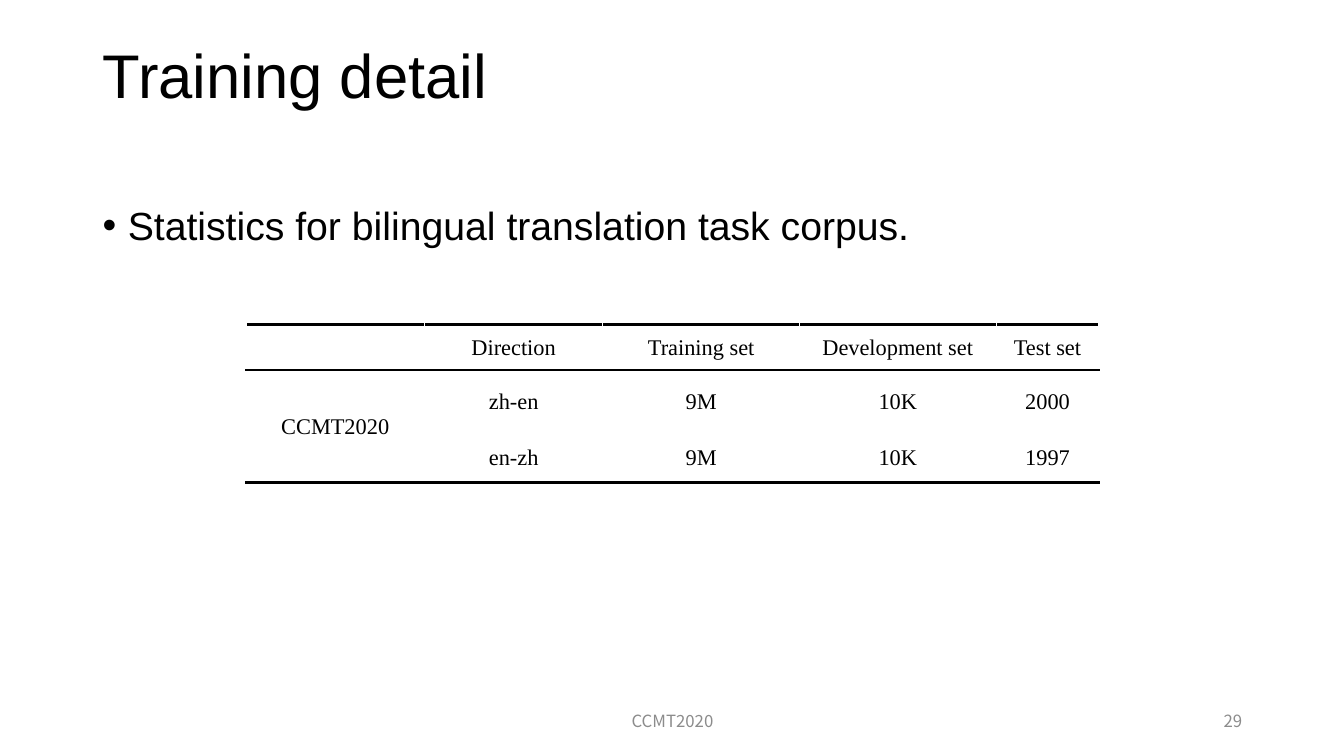
from lxml import etree
from pptx import Presentation
from pptx.dml.color import RGBColor
from pptx.enum.text import MSO_ANCHOR, PP_ALIGN
from pptx.oxml.ns import qn
from pptx.util import Inches, Pt

LEFT, CENTER, RIGHT = PP_ALIGN.LEFT, PP_ALIGN.CENTER, PP_ALIGN.RIGHT
TOP, MIDDLE = MSO_ANCHOR.TOP, MSO_ANCHOR.MIDDLE
COLORS = {"text": "000000", "footer": "8C8C8C", "rule": "000000", "blank": "FFFFFF"}


def write_text(tf, text, size, font="Arial", color="text", align=LEFT, spacing=1.0, bullet=None):
    p = tf.paragraphs[0]
    p.alignment = align
    p.line_spacing = spacing
    if bullet:
        pPr = p._p.get_or_add_pPr()
        pPr.set("marL", str(Inches(0.25)))
        pPr.set("indent", str(-Inches(0.25)))
        etree.SubElement(pPr, qn("a:buFont")).set("typeface", "Arial")
        etree.SubElement(pPr, qn("a:buChar")).set("char", bullet)
    r = p.add_run()
    r.text = text
    r.font.size = Pt(size)
    r.font.name = font
    r.font.color.rgb = RGBColor.from_string(COLORS[color])


def set_borders(cell, top, bottom):
    tcPr = cell._tc.get_or_add_tcPr()
    sides = {"L": ("blank", 1), "R": ("blank", 1), "T": top, "B": bottom}
    for i, (side, (color, width)) in enumerate(sides.items()):
        ln = etree.Element(qn("a:ln" + side), w=str(Pt(width)))
        fill = etree.SubElement(ln, qn("a:solidFill"))
        etree.SubElement(fill, qn("a:srgbClr")).set("val", COLORS[color])
        tcPr.insert(i, ln)


prs = Presentation()
prs.slide_width, prs.slide_height = Inches(13.33), Inches(7.5)
s = prs.slides.add_slide(prs.slide_layouts[6])

footer = dict(size=12, font="Noto Sans CJK SC", color="footer")
boxes = [
    ("Training detail", (0.92, 0.4, 8.17, 0.96), TOP, dict(size=44, spacing=0.9)),
    ("Statistics for bilingual translation task corpus.", (0.92, 2, 11.5, 4.76), TOP,
     dict(size=28, spacing=0.9, bullet="•")),
    ("29", (9.42, 6.95, 3, 0.4), MIDDLE, dict(footer, align=RIGHT)),
    ("CCMT2020", (4.42, 6.95, 4.5, 0.4), MIDDLE, dict(footer, align=CENTER)),
]
for text, place, anchor, style in boxes:
    tf = s.shapes.add_textbox(*[Inches(v) for v in place]).text_frame
    tf.word_wrap = True
    tf.vertical_anchor = anchor
    write_text(tf, text, **style)

rows = [
    ["", "Direction", "Training set", "Development set", "Test set"],
    ["CCMT2020", "zh-en", "9M", "10K", "2000"],
    ["", "en-zh", "9M", "10K", "1997"],
]
col_widths = [1.77, 1.77, 1.95, 1.95, 1.02]
row_heights = [0.45, 0.62, 0.5]
thick, thin, none = ("rule", 2.25), ("rule", 1), ("blank", 1)
rules = [thick, thin, none, thick]

table = s.shapes.add_table(len(rows), len(col_widths), Inches(2.44), Inches(3.22),
                           Inches(sum(col_widths)), Inches(sum(row_heights))).table
table.first_row = table.horz_banding = False
for col, width in zip(table.columns, col_widths):
    col.width = Inches(width)
for row, height in zip(table.rows, row_heights):
    row.height = Inches(height)
for i, row in enumerate(rows):
    for j, text in enumerate(row):
        cell = table.cell(i, j)
        cell.fill.background()
        cell.vertical_anchor = MIDDLE
        cell.margin_left = cell.margin_right = cell.margin_top = Inches(0.01)
        cell.margin_bottom = 0
        merged = j == 0 and i > 0
        set_borders(cell, rules[1] if merged else rules[i], rules[3] if merged else rules[i + 1])
        if text:
            write_text(cell.text_frame, text, 16, font="Times New Roman", align=CENTER)
table.cell(1, 0).merge(table.cell(2, 0))

prs.save("out.pptx")
